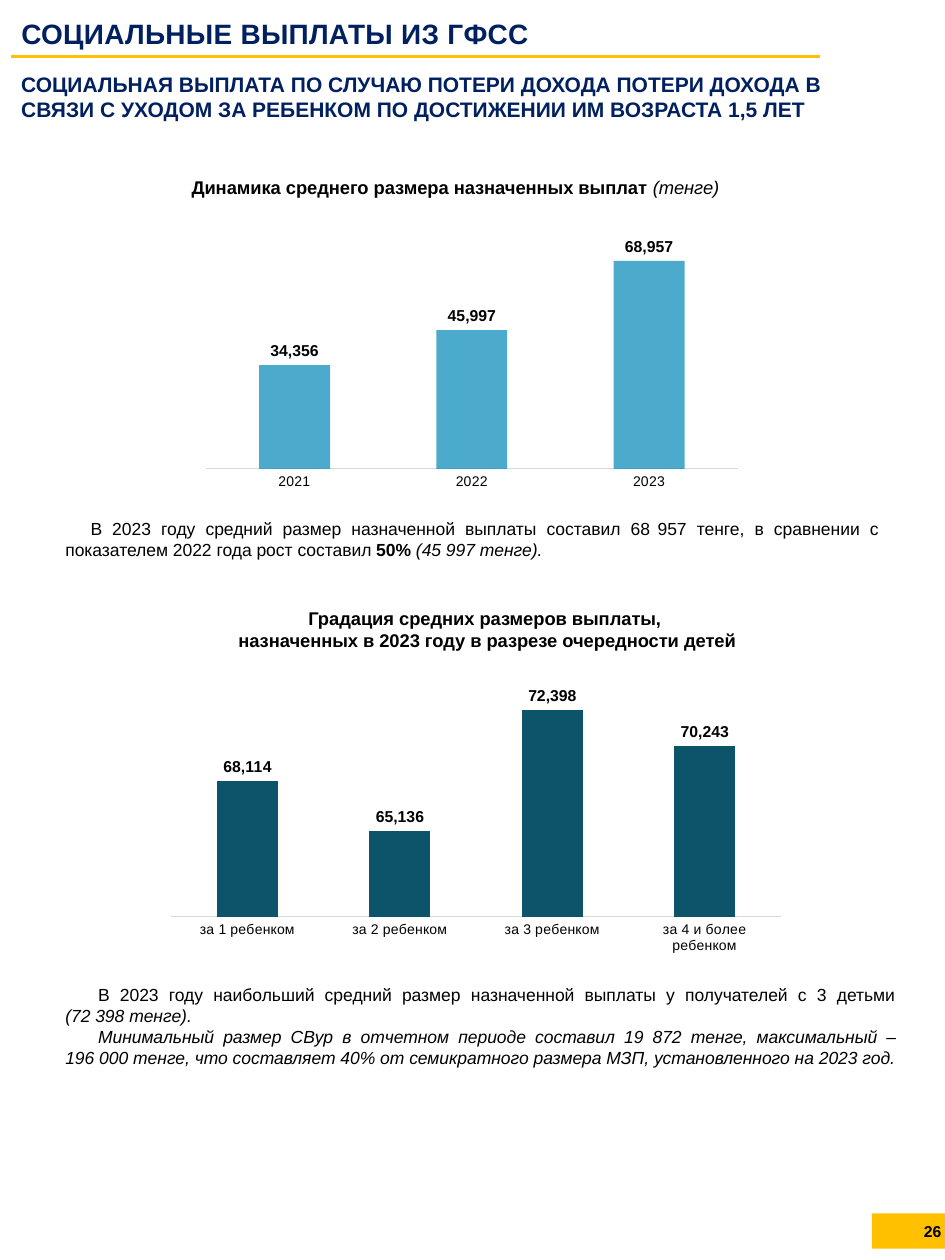
from lxml import etree
from pptx import Presentation
from pptx.chart.data import CategoryChartData
from pptx.dml.color import RGBColor
from pptx.enum.chart import XL_CHART_TYPE, XL_LABEL_POSITION, XL_TICK_MARK
from pptx.enum.shapes import MSO_CONNECTOR, MSO_SHAPE
from pptx.enum.text import MSO_ANCHOR, MSO_AUTO_SIZE, PP_ALIGN
from pptx.oxml import parse_xml
from pptx.oxml.ns import nsdecls, qn
from pptx.util import Inches, Pt

NAVY = RGBColor(0x00, 0x20, 0x60)
BLACK = RGBColor(0x00, 0x00, 0x00)
GOLD = RGBColor(0xFF, 0xC0, 0x00)
BLUE = RGBColor(0x00, 0x88, 0xB8)
TEAL = RGBColor(0x0D, 0x53, 0x69)
GREY = RGBColor(0xD9, 0xD9, 0xD9)

WIDTH, HEIGHT = Inches(7.5), Inches(10)
COL, ROW = WIDTH // 75, HEIGHT // 100

BOLD = {"bold": True}
ITALIC = {"italic": True}


def grid(col, row, cols, rows):
    return int(col * COL), int(row * ROW), int(cols * COL), int(rows * ROW)


def set_font(font, color, size, **values):
    for key, value in {"name": "Arial", "size": Pt(size), **values}.items():
        setattr(font, key, value)
    font.color.rgb = color


def write(tf, paragraphs, size, color=BLACK, align=PP_ALIGN.LEFT, indent=0):
    for i, runs in enumerate(paragraphs):
        p = tf.paragraphs[0] if i == 0 else tf.add_paragraph()
        p.alignment = align
        pPr = p._p.get_or_add_pPr()
        pPr.set("marL", "0")
        pPr.set("indent", str(Inches(indent)))
        for text, values in runs:
            for n, line in enumerate(text.split("\n")):
                if n:
                    p.add_line_break()
                if line:
                    r = p.add_run()
                    r.text = line
                    set_font(r.font, color, **{"size": size, **values})


def add_text(s, box, paragraphs, size, wrap=True, fit=MSO_AUTO_SIZE.SHAPE_TO_FIT_TEXT,
             anchor=MSO_ANCHOR.TOP, **style):
    tf = s.shapes.add_textbox(*grid(*box)).text_frame
    for key, value in {"word_wrap": wrap, "auto_size": fit, "vertical_anchor": anchor}.items():
        setattr(tf, key, value)
    write(tf, paragraphs, size, **style)


def add_header(s, title, subtitle):
    sp = s.shapes.title
    sp.left, sp.top, sp.width, sp.height = grid(1.5, 1.1, 71.9, 2.9)
    tf = sp.text_frame
    for key, value in {"margin_left": 0, "margin_top": Inches(0.02), "margin_right": 0,
                       "margin_bottom": 0, "word_wrap": True,
                       "vertical_anchor": MSO_ANCHOR.TOP,
                       "auto_size": MSO_AUTO_SIZE.SHAPE_TO_FIT_TEXT}.items():
        setattr(tf, key, value)
    write(tf, [[(title, BOLD)]], 16, NAVY)
    p = tf.paragraphs[0]
    p.space_before = Pt(1.3)
    p._p.get_or_add_pPr().set("marL", str(Inches(0.02)))
    p.runs[0].font._element.set("spc", "20")
    x, y, w, h = grid(0.9, 4.5, 64.2, 0)
    rule = s.shapes.add_connector(MSO_CONNECTOR.STRAIGHT, x, y, x + w, y)
    rule.line.color.rgb = GOLD
    rule.line.width = Pt(1.5)
    etree.SubElement(rule._element.spPr, qn("a:effectLst"))
    add_text(s, (0.7, 5.2, 70.5, 5), [[(subtitle, BOLD)]], 12, color=NAVY)


def add_columns(s, box, data, color, plot, scale, alpha=None):
    cd = CategoryChartData(number_format="#,##0")
    cd.categories = list(data)
    cd.add_series("Средний размер", list(data.values()))
    chart = s.shapes.add_chart(XL_CHART_TYPE.COLUMN_CLUSTERED, *grid(*box), cd).chart
    chart.has_title = chart.has_legend = False
    set_font(chart.font, BLACK, 10, name="Calibri")

    cat, val = chart.category_axis, chart.value_axis
    cat.major_tick_mark = cat.minor_tick_mark = XL_TICK_MARK.NONE
    set_font(cat.tick_labels.font, BLACK, 8)
    cat.format.line.color.rgb = GREY
    cat.format.line.width = Pt(0.75)
    val.visible = val.has_major_gridlines = False
    val.minimum_scale, val.maximum_scale = scale

    columns = chart.plots[0]
    for key, value in {"gap_width": 150, "overlap": -27, "vary_by_categories": False}.items():
        setattr(columns, key, value)
    series = columns.series[0]
    fill = series.format.fill
    fill.solid()
    fill.fore_color.rgb = color
    if alpha:
        rgb = series._element.find(".//" + qn("a:srgbClr"))
        etree.SubElement(rgb, qn("a:alpha")).set("val", str(alpha * 1000))
    labels = series.data_labels
    for key, value in {"show_value": True, "position": XL_LABEL_POSITION.OUTSIDE_END,
                       "number_format": "#,##0", "number_format_is_linked": False}.items():
        setattr(labels, key, value)
    set_font(labels.font, BLACK, 9, bold=True)

    area = chart._chartSpace.chart.plotArea
    for old in area.findall(qn("c:layout")):
        area.remove(old)
    parts = "".join(f'<c:{k}Mode val="edge"/>' for k in "xy")
    parts += "".join(f'<c:{k} val="{v}"/>' for k, v in zip("xywh", plot))
    area.insert(0, parse_xml(f'<c:layout {nsdecls("c")}><c:manualLayout>'
                             f'<c:layoutTarget val="inner"/>{parts}'
                             '</c:manualLayout></c:layout>'))


def add_dynamics(s):
    add_columns(s, (15, 16.7, 44.9, 22.8), {"2021": 34356, "2022": 45997, "2023": 68957},
                BLUE, (0.03, 0.06, 0.94, 0.84), (0, 80000), alpha=70)
    add_text(s, (7.2, 13.5, 51.3, 2.8),
             [[("Динамика среднего размера назначенных выплат ", BOLD), ("(тенге)", ITALIC)]],
             10.5, wrap=False, align=PP_ALIGN.CENTER, indent=0.66)
    add_text(s, (4.2, 40.6, 66.5, 4.4),
             [[("В 2023 году средний размер назначенной выплаты составил 68", {}),
               (" ", {"size": 5}),
               ("957 тенге, в сравнении с показателем 2022 года рост составил ", {}),
               ("50% ", BOLD), ("(45 997 тенге).", ITALIC)]],
             10, align=PP_ALIGN.JUSTIFY, indent=0.2)


def add_gradation(s):
    add_columns(s, (12.6, 53.8, 50.4, 22.3),
                {"за 1 ребенком": 68114, "за 2 ребенком": 65136,
                 "за 3 ребенком": 72398, "за 4 и более ребенком": 70243},
                TEAL, (0.02, 0.02, 0.96, 0.83), (60000, 74000))
    add_text(s, (0.1, 47.7, 70.6, 4.5),
             [[("Градация средних размеров выплаты, ", BOLD)],
              [("назначенных в 2023 году в разрезе очередности детей", BOLD)]],
             10.5, align=PP_ALIGN.CENTER, indent=0.66)
    add_text(s, (4.2, 77.6, 68.6, 7.7),
             [[("В 2023 году наибольший средний размер назначенной выплаты "
                "у получателей с 3 детьми \n", {}), ("(72 398 тенге).", ITALIC)],
              [("Минимальный размер СВур в отчетном периоде составил 19 872 тенге, "
                "максимальный – \n196 000 тенге, что составляет 40% от семикратного "
                "размера МЗП, установленного на 2023 год. ", ITALIC)]],
             10, align=PP_ALIGN.JUSTIFY, indent=0.26)


def add_page_number(s, number):
    sp = s.shapes.add_shape(MSO_SHAPE.RECTANGLE, *grid(69.2, 96.3, 5.8, 2.8))
    sp.shadow.inherit = False
    sp.fill.solid()
    sp.fill.fore_color.rgb = GOLD
    sp.line.fill.background()
    add_text(s, (58.8, 95.1, 16.9, 5.3), [[(number, BOLD)]], 9, fit=MSO_AUTO_SIZE.NONE,
             anchor=MSO_ANCHOR.MIDDLE, align=PP_ALIGN.RIGHT)


def main():
    prs = Presentation()
    prs.slide_width, prs.slide_height = WIDTH, HEIGHT
    s = prs.slides.add_slide(prs.slide_layouts[5])
    add_header(s, "СОЦИАЛЬНЫЕ ВЫПЛАТЫ ИЗ ГФСС",
               "СОЦИАЛЬНАЯ ВЫПЛАТА ПО СЛУЧАЮ ПОТЕРИ ДОХОДА ПОТЕРИ ДОХОДА В СВЯЗИ "
               "С УХОДОМ ЗА РЕБЕНКОМ ПО ДОСТИЖЕНИИ ИМ ВОЗРАСТА 1,5 ЛЕТ")
    add_dynamics(s)
    add_gradation(s)
    add_page_number(s, "26")
    prs.save("out.pptx")


if __name__ == "__main__":
    main()
